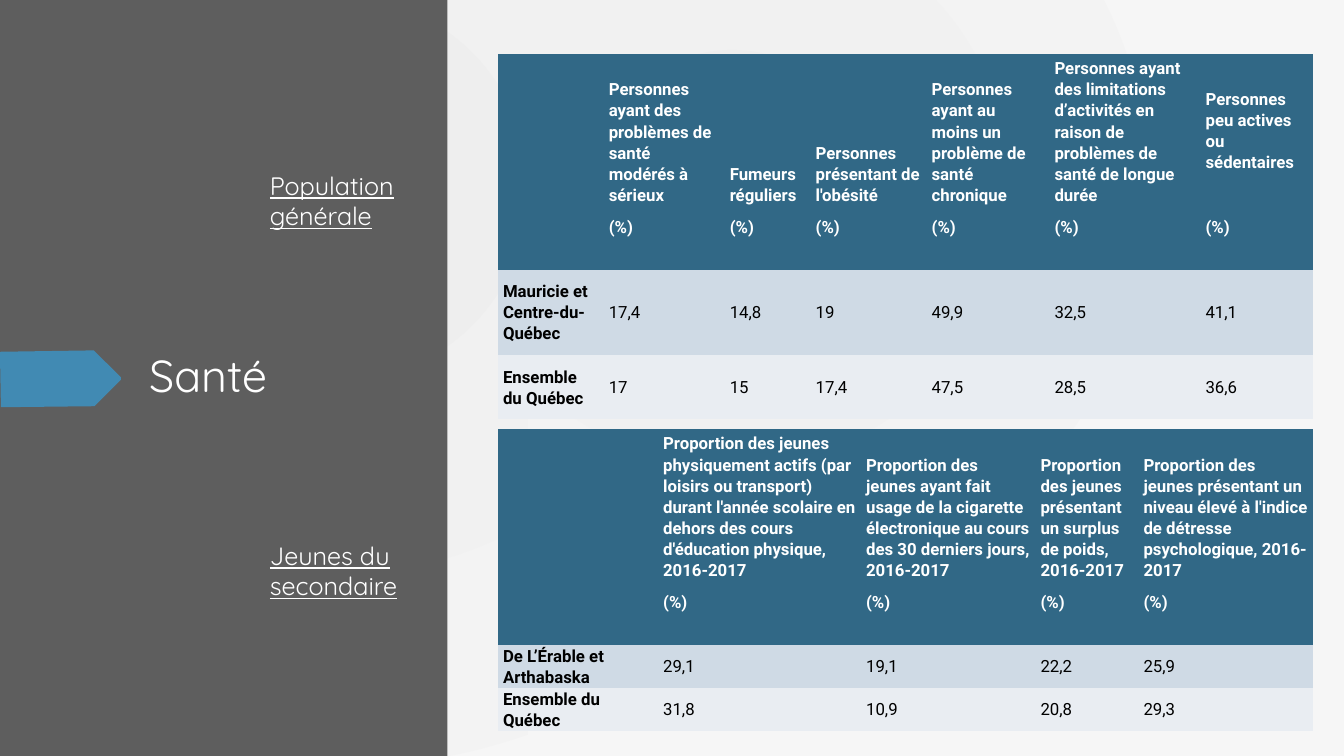
import pptx
import pptx.util
import pptx.dml.color
import pptx.enum.shapes
import pptx.enum.text
import pptx.oxml
import pptx.oxml.ns

Pt = pptx.util.Pt
ANCHOR = pptx.enum.text.MSO_ANCHOR
COLORS = {
    "panel": "5E5E5E", "arrow": "418AB3", "header": "316886",
    "band": "CFDAE5", "plain": "E9EDF2", "white": "FFFFFF",
    "black": "000000", "inner": "EEEEEE", "outer": "F6F6F6",
}
NO_GRID = "{2D5ABB26-0587-4C30-8999-92F81FD0307C}"
TABLE_LEFT = 355.7
UNIT = "(%)"

HEALTH = [
    ["", "Personnes ayant des problèmes de santé modérés à sérieux",
     "Fumeurs réguliers", "Personnes présentant de l'obésité",
     "Personnes ayant au moins un problème de santé chronique",
     "Personnes ayant des limitations d’activités en raison de problèmes de santé de longue durée",
     "Personnes peu actives ou sédentaires"],
    ["Mauricie et Centre-du-Québec", "17,4", "14,8", "19", "49,9", "32,5", "41,1"],
    ["Ensemble du Québec", "17", "15", "17,4", "47,5", "28,5", "36,6"],
]
YOUTH = [
    ["", "Proportion des jeunes physiquement actifs (par loisirs ou transport) durant "
         "l'année scolaire en dehors des cours d'éducation physique, 2016-2017",
     "Proportion des jeunes ayant fait usage de la cigarette électronique au cours "
     "des 30 derniers jours, 2016-2017",
     "Proportion des jeunes présentant un surplus de poids, 2016-2017",
     "Proportion des jeunes présentant un niveau élevé à l'indice de détresse "
     "psychologique, 2016-2017"],
    ["De L’Érable et Arthabaska", "29,1", "19,1", "22,2", "25,9"],
    ["Ensemble du Québec", "31,8", "10,9", "20,8", "29,3"],
]


class SlideBuilder:
    """Holds the deck style and draws elements on the current slide."""

    def __init__(self, prs):
        self.s = prs.slides.add_slide(prs.slide_layouts[6])

    def color(self, name):
        return pptx.dml.color.RGBColor.from_string(COLORS[name])

    def paint(self, fill, name):
        fill.solid()
        fill.fore_color.rgb = self.color(name)

    def radial(self, fill, element):
        fill.gradient()
        for stop, name, position in zip(fill.gradient_stops, ("inner", "outer"), (0, 1)):
            stop.color.rgb = self.color(name)
            stop.position = position
        for lin in list(element.iter(pptx.oxml.ns.qn("a:lin"))):
            lin.getparent().replace(lin, pptx.oxml.parse_xml(
                f'<a:path {pptx.oxml.ns.nsdecls("a")} path="circle">'
                '<a:fillToRect l="50000" t="50000" r="100000" b="100000"/></a:path>'))

    def background(self):
        self.radial(self.s.background.fill, self.s._element)

    def rect(self, x, y, w, h, name=None):
        sp = self.s.shapes.add_shape(
            pptx.enum.shapes.MSO_SHAPE.RECTANGLE, Pt(x), Pt(y), Pt(w), Pt(h))
        sp.shadow.inherit = False
        sp.line.fill.background()
        if name:
            self.paint(sp.fill, name)
        else:
            self.radial(sp.fill, sp._element)

    def outline(self, points, name):
        corners = [(Pt(x), Pt(y)) for x, y in points]
        builder = self.s.shapes.build_freeform(*corners[0])
        builder.add_line_segments(corners[1:], close=True)
        sp = builder.convert_to_shape()
        sp.shadow.inherit = False
        sp.line.fill.background()
        self.paint(sp.fill, name)

    def font(self, p, face, size, name, bold=False, underline=False):
        for r in p.runs:
            r.font.name = face
            r.font.size = Pt(size)
            r.font.bold = bold
            r.font.underline = underline
            r.font.color.rgb = self.color(name)

    def text(self, x, y, w, h, words, size, underline=False, anchor=ANCHOR.TOP):
        tf = self.s.shapes.add_textbox(Pt(x), Pt(y), Pt(w), Pt(h)).text_frame
        tf.word_wrap = True
        tf.vertical_anchor = anchor
        tf.text = words
        self.font(tf.paragraphs[0], "Quicksand", size, "white", underline=underline)

    def cell(self, cell, words, fill, color, bold, anchor, bottom=0, gap=8):
        self.paint(cell.fill, fill)
        cell.margin_left = cell.margin_right = Pt(3.6)
        cell.margin_top, cell.margin_bottom = 0, Pt(bottom)
        cell.vertical_anchor = anchor
        cell.text_frame.text = words
        for p in cell.text_frame.paragraphs:
            p.line_spacing = 1.07
            p.space_after = Pt(gap)
            self.font(p, "Roboto", 12, color, bold)

    def table(self, y, widths, heights, rows, label_anchor, gaps):
        frame = self.s.shapes.add_table(
            len(rows), len(widths), Pt(TABLE_LEFT), Pt(y), Pt(sum(widths)), Pt(sum(heights)))
        table = frame.table
        table.first_row = table.horz_banding = False
        table._tbl.tblPr.find(pptx.oxml.ns.qn("a:tableStyleId")).text = NO_GRID
        for column, width in zip(table.columns, widths):
            column.width = Pt(width)
        for i, (row, height, fill) in enumerate(zip(rows, heights, ("header", "band", "plain"))):
            table.rows[i].height = Pt(height)
            for j, words in enumerate(row):
                cell = table.cell(i, j)
                if i == 0:
                    self.cell(cell, words and f"{words}\n{UNIT}", fill, "white", True,
                              ANCHOR.BOTTOM, 23, gaps.get(j, 8))
                else:
                    self.cell(cell, words, fill, "black", j == 0,
                              ANCHOR.MIDDLE if j else label_anchor)


def main():
    prs = pptx.Presentation()
    prs.slide_width, prs.slide_height = Pt(960), Pt(540)
    slide = SlideBuilder(prs)
    slide.background()
    slide.rect(0, 0, 319.7, 540, "panel")
    slide.text(99.4, 244, 193, 46.8, "Santé", 32, anchor=ANCHOR.MIDDLE)
    slide.outline([(0, 251.3), (67, 250.3), (86.4, 269.5), (86.4, 271.3),
                   (67.5, 290.2), (0.7, 290.9)], "arrow")
    slide.rect(377.3, 0, 582.7, 540)
    slide.table(38.4, [75.6, 86.4, 61.4, 82.8, 87.8, 107.9, 80.3], [153.8, 61.3, 45.6],
                HEALTH, ANCHOR.MIDDLE, {6: 31})
    slide.table(306.3, [114.4, 145, 124.6, 73.6, 124.6], [151, 30.2, 30.2],
                YOUTH, ANCHOR.BOTTOM, {})
    for y, words in ((118.1, "Population générale"), (382.3, "Jeunes du secondaire")):
        slide.text(185.7, y, 147.6, 51.1, words, 18, underline=True)
    prs.save("out.pptx")


if __name__ == "__main__":
    main()
